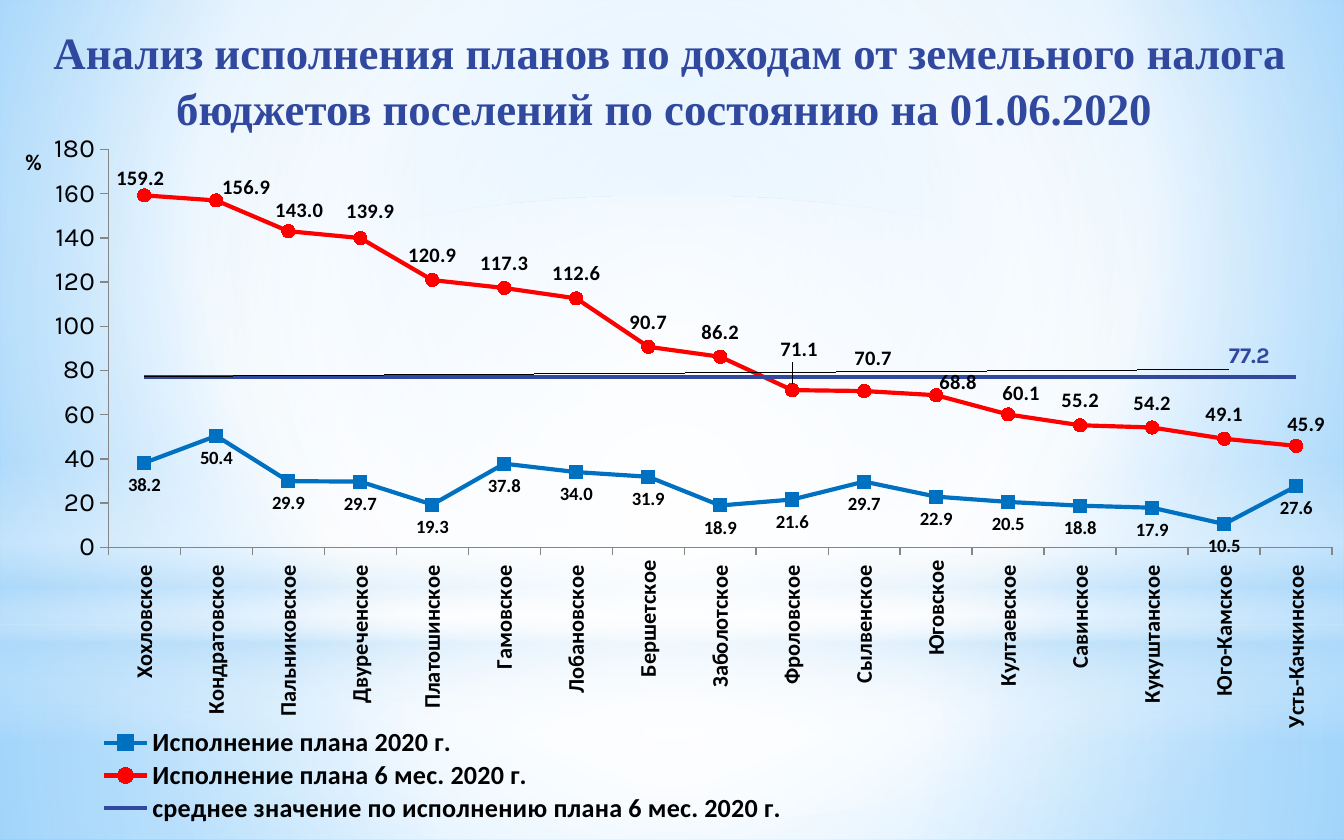
from lxml import etree
from pptx import Presentation
from pptx.chart.data import CategoryChartData
from pptx.dml.color import RGBColor
from pptx.enum.chart import XL_CHART_TYPE, XL_LABEL_POSITION, XL_LEGEND_POSITION, XL_MARKER_STYLE, XL_TICK_MARK
from pptx.enum.shapes import MSO_SHAPE
from pptx.enum.text import MSO_ANCHOR, PP_ALIGN
from pptx.oxml import parse_xml
from pptx.oxml.ns import nsdecls, qn
from pptx.util import Pt

ABOVE, BELOW = XL_LABEL_POSITION.ABOVE, XL_LABEL_POSITION.BELOW
SQUARE, CIRCLE, NO_MARKER = XL_MARKER_STYLE.SQUARE, XL_MARKER_STYLE.CIRCLE, XL_MARKER_STYLE.NONE
EMU_PER_PX = 914400 / 134.4
COLORS = {"title": "31489F", "plan_year": "0070C0", "plan_half": "FF0000",
          "average": "31489F", "text": "000000", "axis": "868686",
          "white": "FFFFFF", "haze": "B4DCFA", "sky": "9ED5FF", "deep_sky": "5BB9FF"}
CHART_BOX = (8, 82, 1339, 758)


def px(*lengths):
    return [round(length * EMU_PER_PX) for length in lengths]


def set_gradient(fill, owner, stops, focus=None):
    """Give owner's fill (position, color, opacity) stops: radial to focus, or top to bottom."""
    fill.gradient()
    old = next(owner.iter(qn("a:gradFill")))
    stop_xml = "".join(
        f'<a:gs pos="{pos * 1000}"><a:srgbClr val="{COLORS[color]}">'
        f'<a:alpha val="{opacity * 1000}"/></a:srgbClr></a:gs>' for pos, color, opacity in stops)
    if focus:
        edges = " ".join(f'{side}="{value * 1000}"' for side, value in zip("ltrb", focus))
        direction = f'<a:path path="circle"><a:fillToRect {edges}/></a:path>'
    else:
        direction = '<a:lin ang="5400000" scaled="0"/>'
    old.getparent().replace(old, parse_xml(
        f'<a:gradFill {nsdecls("a")} rotWithShape="1"><a:gsLst>{stop_xml}</a:gsLst>{direction}</a:gradFill>'))


prs = Presentation()
prs.slide_width, prs.slide_height = px(1344, 840)
slide = prs.slides.add_slide(prs.slide_layouts[5])

# Background
set_gradient(slide.background.fill, slide.element,
             [(0, "sky", 100), (60, "white", 100), (100, "deep_sky", 100)], (20, 10, 20, 60))
CENTER = (50, 50, 50, 50)
glows = [
    (MSO_SHAPE.RECTANGLE, (0, 625, 1344, 215),
     [(0, "white", 91), (37, "white", 76), (100, "haze", 79)], CENTER),
    (MSO_SHAPE.RECTANGLE, (0, 0, 1344, 625),
     [(0, "white", 89), (48, "white", 62), (100, "haze", 79)], CENTER),
    (MSO_SHAPE.RECTANGLE, (0, 461, 1344, 280),
     [(0, "white", 0), (29, "white", 30), (45, "haze", 40),
      (55, "white", 26), (65, "haze", 60), (100, "white", 0)], None),
    (MSO_SHAPE.OVAL, (0, 196, 1344, 625), [(0, "white", 100), (56, "white", 0)], CENTER),
]
for outline, box, stops, focus in glows:
    glow = slide.shapes.add_shape(outline, *px(*box))
    glow.shadow.inherit = False
    glow.line.fill.background()
    set_gradient(glow.fill, glow.element, stops, focus)

# Title
title = slide.shapes.title
title.element.getparent().append(title.element)
title.left, title.top, title.width, title.height = px(0, 15, 1339, 70)
title.text_frame.word_wrap = True
title.text_frame.vertical_anchor = MSO_ANCHOR.TOP
heading = title.text_frame.paragraphs[0]
heading.text = ("Анализ исполнения планов по доходам от земельного налога "
                "бюджетов поселений по состоянию на 01.06.2020 ")
heading.alignment = PP_ALIGN.CENTER
heading.line_spacing = 1.05
heading.font.name, heading.font.size, heading.font.bold = "Times New Roman", Pt(24), True
heading.font.color.rgb = RGBColor.from_string(COLORS["title"])

# Chart data
settlements = ["Хохловское ", "Кондратовское ", "Пальниковское ", "Двуреченское ", "Платошинское ",
               "Гамовское ", "Лобановское ", "Бершетское", "Заболотское ", "Фроловское ",
               "Сылвенское ", "Юговское", "Култаевское ", "Савинское ", "Кукуштанское ",
               "Юго-Камское ", "Усть-Качкинское "]
plan_year = [38.2, 50.4, 29.9, 29.7, 19.3, 37.8, 34, 31.9, 18.9, 21.6, 29.7, 22.9, 20.5, 18.8, 17.9, 10.5, 27.6]
plan_half = [159.2, 156.9, 143, 139.9, 120.9, 117.3, 112.6, 90.7, 86.2, 71.1, 70.7, 68.8, 60.1, 55.2,
             54.2, 49.1, 45.9]
data = CategoryChartData()
data.categories = settlements
data.add_series("Исполнение плана 2020 г.", plan_year)
data.add_series("Исполнение плана 6 мес. 2020 г.", plan_half)
data.add_series("среднее значение по исполнению плана 6 мес. 2020 г.", [77.2] * len(settlements))
chart = slide.shapes.add_chart(XL_CHART_TYPE.LINE_MARKERS, *px(*CHART_BOX), data).chart
chart.has_title = False
chart.font.name, chart.font.size = "Karla", Pt(18)
chart.font.color.rgb = RGBColor.from_string(COLORS["text"])
plot = chart.plots[0]
plot.vary_by_categories = False

# Series; label shifts are px from the default place, by point index
half_shifts = {0: (-4, 8), 1: (30, 12), 2: (11, 4), 3: (10, -2), 9: (7, -16),
               10: (9, -8), 11: (22, 12), 12: (13, 3), 16: (10, 3)}
series_styles = [
    ("plan_year", SQUARE, BELOW, "Calibri", 10, "text", True, {}),
    ("plan_half", CIRCLE, ABOVE, "Calibri", 11, "text", True, half_shifts),
    ("average", NO_MARKER, ABOVE, "Karla", 12, "average", False, {0: (1105, -2)}),
]
for series, (key, marker, place, face, size, label_color, show_all, shifts) in zip(plot.series, series_styles):
    color = RGBColor.from_string(COLORS[key])
    series.smooth = False
    series.format.line.color.rgb = color
    series.format.line.width = Pt(2.25)
    series.marker.style = marker
    if marker != NO_MARKER:
        series.marker.size = 7
        series.marker.format.fill.solid()
        series.marker.format.fill.fore_color.rgb = color
        series.marker.format.line.color.rgb = color
    labels = series.data_labels
    labels.show_value = show_all
    labels.number_format, labels.number_format_is_linked = "#,##0.0", False
    labels.position = place
    shifted = [series.points[index].data_label for index in shifts]
    for label in [labels] + shifted:
        label.font.name, label.font.size, label.font.bold = face, Pt(size), True
        label.font.color.rgb = RGBColor.from_string(COLORS[label_color])
        label.position = place
    series_xml = chart.element.xpath(".//c:ser")[series_styles.index(
        (key, marker, place, face, size, label_color, show_all, shifts))]
    for label_xml in series_xml.xpath(".//c:dLbl"):
        index = label_xml.find(qn("c:idx"))
        dx, dy = shifts[int(index.get("val"))]
        index.addnext(parse_xml(f'<c:numFmt {nsdecls("c")} formatCode="#,##0.0" sourceLinked="0"/>'))
        index.addnext(parse_xml(
            f'<c:layout {nsdecls("c")}><c:manualLayout><c:x val="{dx / CHART_BOX[2]:.4f}"/>'
            f'<c:y val="{dy / CHART_BOX[3]:.4f}"/></c:manualLayout></c:layout>'))

# Axes
category_axis, value_axis = chart.category_axis, chart.value_axis
for axis, face, size, bold in [(category_axis, "Calibri", 12, True), (value_axis, "Karla", 14, False)]:
    axis.has_major_gridlines = False
    axis.major_tick_mark = XL_TICK_MARK.OUTSIDE
    axis.format.line.color.rgb = RGBColor.from_string(COLORS["axis"])
    font = axis.tick_labels.font
    font.name, font.size, font.bold = face, Pt(size), bold
chart.element.xpath(".//c:catAx/c:txPr/a:bodyPr")[0].set("rot", "-5400000")
value_axis.minimum_scale, value_axis.maximum_scale, value_axis.major_unit = 0, 180, 20
value_axis.tick_labels.number_format = "#,##0"
value_axis.tick_labels.number_format_is_linked = False
unit = value_axis.axis_title.text_frame.paragraphs[0]
unit.text = "%"
unit.font.name, unit.font.size, unit.font.bold = "Calibri", Pt(12), True
chart.element.xpath(".//c:valAx/c:title//a:bodyPr")[0].set("rot", "0")

# Legend
chart.has_legend = True
chart.legend.position = XL_LEGEND_POSITION.BOTTOM
chart.legend.include_in_layout = False
legend_font = chart.legend.font
legend_font.name, legend_font.size, legend_font.bold = "Calibri", Pt(14), True

# Fixed places inside the chart, as fractions of its size
places = [
    (".//c:plotArea", None, {"x": 0.075, "y": 0.089, "w": 0.914, "h": 0.525}),
    (".//c:valAx/c:title", "c:tx", {"x": 0.01, "y": 0.08}),
    (".//c:legend", "c:legendPos", {"x": 0.05, "y": 0.85, "w": 0.55, "h": 0.13}),
]
for owner_path, before, fractions in places:
    owner = chart.element.xpath(owner_path)[0]
    for old in owner.findall(qn("c:layout")):
        owner.remove(old)
    layout = etree.Element(qn("c:layout"))
    manual = etree.SubElement(layout, qn("c:manualLayout"))
    if before is None:
        etree.SubElement(manual, qn("c:layoutTarget")).set("val", "inner")
    for side in "xy":
        etree.SubElement(manual, qn(f"c:{side}Mode")).set("val", "edge")
    for side, value in fractions.items():
        etree.SubElement(manual, qn(f"c:{side}")).set("val", str(value))
    if before is None:
        owner.insert(0, layout)
    else:
        owner.find(qn(before)).addnext(layout)

prs.save("out.pptx")
